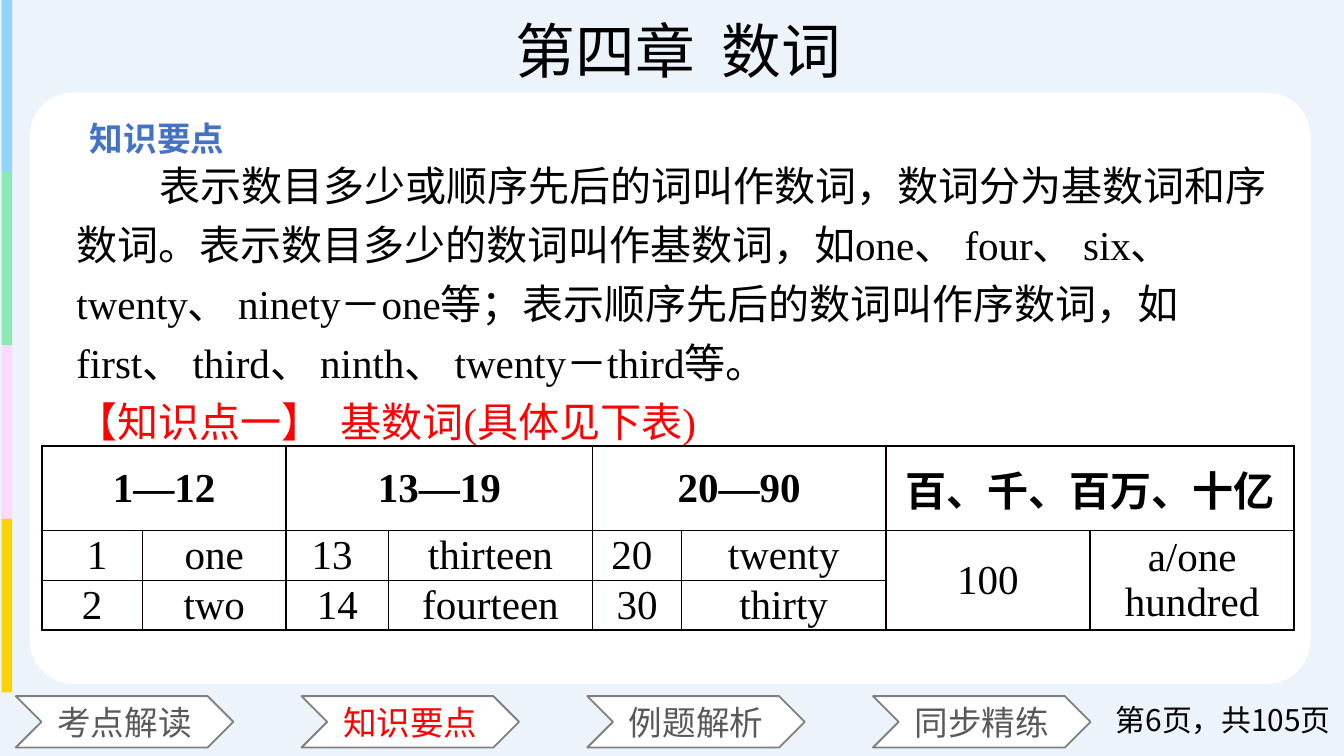
from lxml import etree
from pptx import Presentation
from pptx.dml.color import RGBColor
from pptx.enum.shapes import MSO_SHAPE
from pptx.enum.text import MSO_ANCHOR, MSO_AUTO_SIZE, PP_ALIGN
from pptx.oxml.ns import qn
from pptx.util import Cm, Pt

RECT, ROUNDED, CHEVRON = MSO_SHAPE.RECTANGLE, MSO_SHAPE.ROUNDED_RECTANGLE, MSO_SHAPE.CHEVRON
LEFT, CENTER, RIGHT = PP_ALIGN.LEFT, PP_ALIGN.CENTER, PP_ALIGN.RIGHT
MIDDLE, TOP = MSO_ANCHOR.MIDDLE, MSO_ANCHOR.TOP
NO_AUTOFIT = MSO_AUTO_SIZE.NONE

SANS, SERIF = "Noto Sans CJK SC", "Times New Roman"
COLORS = {
    "background": "ECF3FB", "panel": "FFFFFF", "text": "000000",
    "heading": "4472C4", "accent": "FF0000", "nav": "595959",
    "nav_line": "808080", "border": "080000",
    "blue": "91D5FD", "green": "8CE9B4", "pink": "FEDAFE", "yellow": "FBD302",
}

INTRO = ("表示数目多少或顺序先后的词叫作数词，数词分为基数词和序数词。"
         "表示数目多少的数词叫作基数词，如one、 four、 six、 twenty、 ninety－one等；"
         "表示顺序先后的数词叫作序数词，如first、 third、 ninth、 twenty－third等。")
POINT = "【知识点一】  基数词(具体见下表)"
SECTIONS = ["考点解读", "知识要点", "例题解析", "同步精练"]
GROUPS = ["1—12", "13—19", "20—90", "百、千、百万、十亿"]
NUMERALS = [
    [" 1", "one", "13 ", "thirteen", "20 ", "twenty", "100", "a/one hundred"],
    ["2", "two", "14", "fourteen", "30", "thirty", "", ""],
]
COLUMN_WIDTHS = [1.9, 2.72, 1.93, 3.86, 1.68, 3.86, 3.86, 3.86]
ROW_HEIGHTS = [1.6, 0.94, 0.94]


def rgb(color):
    return RGBColor.from_string(COLORS[color])


def lengths(box):
    return [Cm(value) for value in box]


def style(paragraph, size, font=SANS, color="text", bold=False, align=LEFT):
    paragraph.alignment = align
    paragraph.font.size = Pt(size)
    paragraph.font.bold = bold
    paragraph.font.color.rgb = rgb(color)
    paragraph.font.name = font
    east_asian = etree.SubElement(paragraph.font._element, qn("a:ea"))
    east_asian.set("typeface", SANS)


def add_block(slide, kind, box, fill, line=None):
    block = slide.shapes.add_shape(kind, *lengths(box))
    block.shadow.inherit = False
    block.fill.solid()
    block.fill.fore_color.rgb = rgb(fill)
    if line:
        block.line.color.rgb = rgb(line)
        block.line.width = Pt(1)
    else:
        block.line.fill.background()
    return block


def add_label(slide, box, text, size, anchor=TOP, **look):
    frame = slide.shapes.add_textbox(*lengths(box)).text_frame
    frame.word_wrap = True
    frame.vertical_anchor = anchor
    frame.margin_left = Cm(0.25)
    frame.text = text
    style(frame.paragraphs[0], size, **look)
    return frame


def place(placeholder, box):
    placeholder.left, placeholder.top, placeholder.width, placeholder.height = lengths(box)
    placeholder.text_frame.auto_size = NO_AUTOFIT


def add_title(slide, box):
    title = slide.shapes.title
    place(title, box)
    title.text_frame.text = "第四章  数词"
    style(title.text_frame.paragraphs[0], 32, SERIF, align=CENTER)


def add_side_stripes(slide, box):
    left, top, width, height = box
    stripes = ["blue", "green", "pink", "yellow"]
    step = height / len(stripes)
    for index, color in enumerate(stripes):
        add_block(slide, RECT, (left, top + index * step, width, step), color)


def add_content(slide, box):
    left, top, width, height = box
    panel = add_block(slide, ROUNDED, box, "panel")
    panel.adjustments[0] = 0.074
    add_label(slide, (left + 0.89, top + 0.36, 7, 1), "知识要点", 18,
              color="heading", bold=True)

    body = slide.placeholders[1]
    place(body, (left + 0.63, top + 0.97, width - 0.99, height - 0.99))
    panel._element.getparent().append(body._element)
    frame = body.text_frame
    frame.text = f"{INTRO}\n{POINT}"
    for paragraph, indent, color in zip(frame.paragraphs, (1.57, 0), ("text", "accent")):
        properties = paragraph._p.get_or_add_pPr()
        properties.set("marL", "0")
        properties.set("indent", str(Cm(indent)))
        paragraph.line_spacing = 1.2
        paragraph.space_before = Pt(0)
        etree.SubElement(properties, qn("a:buNone"))
        style(paragraph, 22, SERIF, color)

    add_numeral_table(slide, (left + 0.23, top + 6.68, sum(COLUMN_WIDTHS), sum(ROW_HEIGHTS)))


def add_borders(cell):
    properties = cell._tc.get_or_add_tcPr()
    for side in ("a:lnL", "a:lnR", "a:lnT", "a:lnB"):
        border = etree.SubElement(properties, qn(side), w=str(Pt(1)))
        fill = etree.SubElement(border, qn("a:solidFill"))
        etree.SubElement(fill, qn("a:srgbClr"), val=COLORS["border"])


def add_numeral_table(slide, box):
    headers = [text for group in GROUPS for text in (group, "")]
    rows = [headers] + NUMERALS
    table = slide.shapes.add_table(len(rows), len(headers), *lengths(box)).table
    table.first_row = table.horz_banding = False
    for column, width in zip(table.columns, COLUMN_WIDTHS):
        column.width = Cm(width)
    for row, height in zip(table.rows, ROW_HEIGHTS):
        row.height = Cm(height)
    for row_index, row in enumerate(rows):
        for column_index, text in enumerate(row):
            cell = table.cell(row_index, column_index)
            add_borders(cell)
            cell.fill.background()
            cell.vertical_anchor = MIDDLE
            cell.margin_left = cell.margin_right = Cm(0.18)
            cell.margin_top = cell.margin_bottom = 0
            cell.text = text
            style(cell.text_frame.paragraphs[0], 22, SERIF, bold=row_index == 0, align=CENTER)
    for column_index in range(0, len(headers), 2):
        table.cell(0, column_index).merge(table.cell(0, column_index + 1))
    for column_index in (6, 7):
        table.cell(1, column_index).merge(table.cell(2, column_index))


def add_navigation(slide, box):
    left, top, width, height = box
    for index, section in enumerate(SECTIONS):
        tab = add_block(slide, CHEVRON, (left + index * 5.4, top, 4.11, height),
                        "panel", "nav_line")
        frame = tab.text_frame
        frame.margin_left = frame.margin_right = 0
        frame.margin_top = frame.margin_bottom = 0
        frame.vertical_anchor = MIDDLE
        frame.text = section
        color = "accent" if section == "知识要点" else "nav"
        style(frame.paragraphs[0], 18, color=color, align=CENTER)
    page = add_label(slide, (left + width - 5.16, top + 0.07, 5.16, 0.76),
                     "第6页，共105页", 16, MIDDLE, align=RIGHT)
    page.margin_left = 0


def main():
    presentation = Presentation()
    presentation.slide_width, presentation.slide_height = Cm(25.4), Cm(14.29)
    slide = presentation.slides.add_slide(presentation.slide_layouts[1])
    slide.background.fill.solid()
    slide.background.fill.fore_color.rgb = rgb("background")
    add_title(slide, (4.47, 0.13, 16.71, 1.63))
    add_side_stripes(slide, (0.03, -0.03, 0.2, 13.12))
    add_content(slide, (0.56, 1.75, 24.21, 11.18))
    add_navigation(slide, (0.3, 13.16, 25.1, 0.97))
    presentation.save("out.pptx")


if __name__ == "__main__":
    main()
